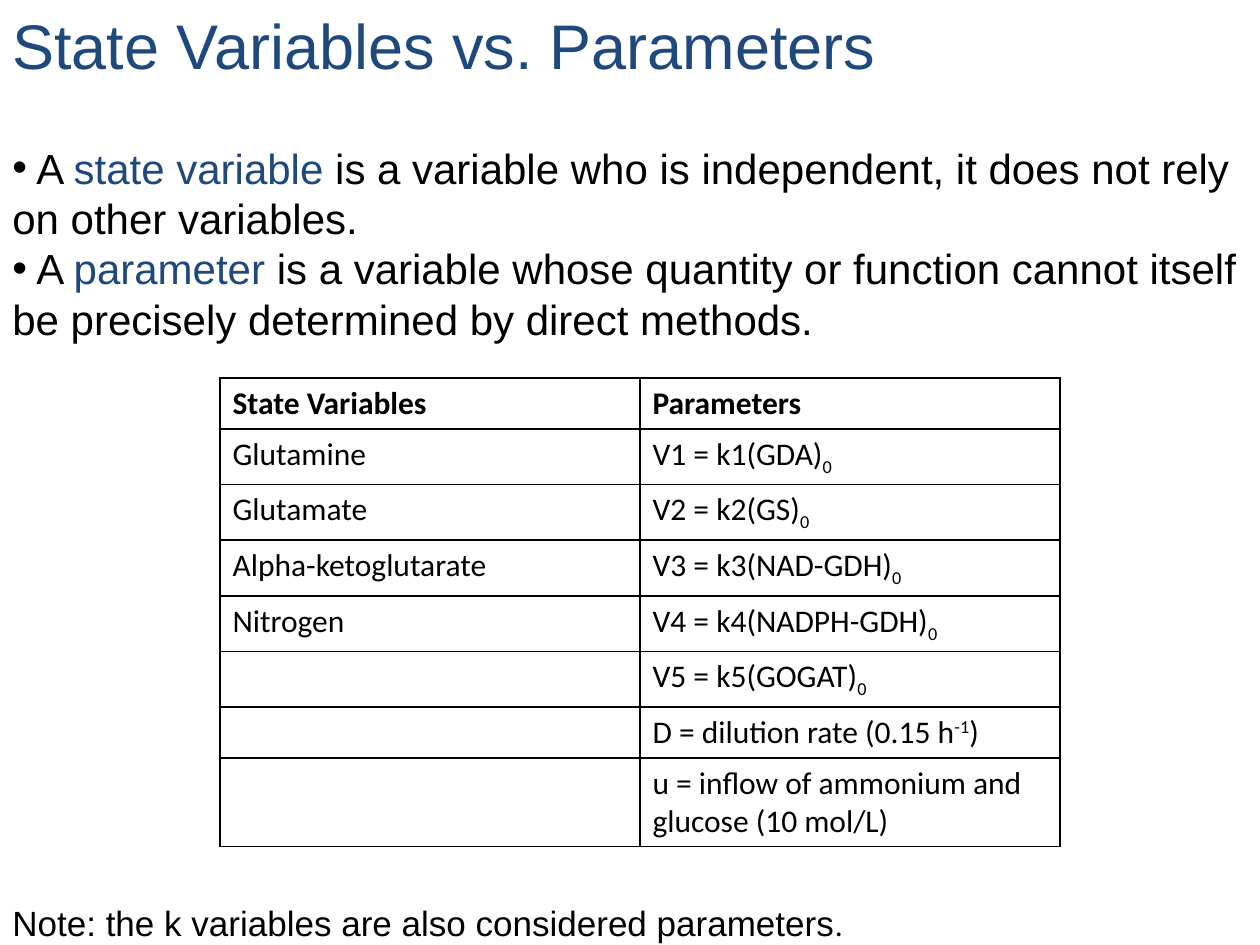
"""Build a slide that contrasts state variables with parameters."""
from dataclasses import dataclass

from lxml import etree
from pptx import Presentation
from pptx.dml.color import RGBColor
from pptx.enum.text import MSO_AUTO_SIZE
from pptx.oxml.ns import qn
from pptx.util import Emu, Pt

GROW = MSO_AUTO_SIZE.SHAPE_TO_FIT_TEXT
EMU_PER_PX = 914400 / 126
BORDER_SIDES = ("a:lnL", "a:lnR", "a:lnT", "a:lnB")
SUBSCRIPT, SUPERSCRIPT = -25000, 30000


@dataclass(frozen=True)
class Theme:
    """Colours, fonts and type sizes of the slide."""
    ink: str = "000000"
    accent: str = "1F497D"
    paper: str = "FFFFFF"
    heading_font: str = "Arial"
    table_font: str = "Calibri"
    title_size: int = 36
    body_size: int = 24
    note_size: int = 20
    table_size: int = 18


THEME = Theme()
TITLE = {"name": THEME.heading_font, "size": Pt(THEME.title_size), "color": THEME.accent}
BODY = {"name": THEME.heading_font, "size": Pt(THEME.body_size), "color": THEME.ink}
TERM = {**BODY, "color": THEME.accent}
NOTE = {**BODY, "size": Pt(THEME.note_size)}
CELL = {"name": THEME.table_font, "size": Pt(THEME.table_size), "color": THEME.ink}
HEADER = {**CELL, "bold": True}

DEFINITIONS = [
    ("state variable ", "is a variable who is independent, it does not rely on other variables."),
    ("parameter ", "is a variable whose quantity or function cannot itself be precisely "
                   "determined by direct methods."),
]
STATE_VARIABLES = ["Glutamine", "Glutamate", "Alpha-ketoglutarate", "Nitrogen"]
ENZYMES = ["GDA", "GS", "NAD-GDH", "NADPH-GDH", "GOGAT"]


def px(length):
    """Turn pixels into EMU."""
    return Emu(round(length * EMU_PER_PX))


def add_run(paragraph, text, style, baseline=None):
    """Append a formatted run, raised or lowered when a baseline is given."""
    run = paragraph.add_run()
    run.text = text
    for attribute, value in style.items():
        if attribute == "color":
            run.font.color.rgb = RGBColor.from_string(value)
        else:
            setattr(run.font, attribute, value)
    if baseline is not None:
        run._r.get_or_add_rPr().set("baseline", str(baseline))


def add_text(slide, box, paragraphs, bullet=None):
    """Add a wrapping text box with one list of runs per paragraph."""
    shape = slide.shapes.add_textbox(*map(px, box))
    frame = shape.text_frame
    frame.word_wrap = True
    frame.auto_size = GROW
    for index, runs in enumerate(paragraphs):
        paragraph = frame.add_paragraph() if index else frame.paragraphs[0]
        if bullet:
            properties = paragraph._p.get_or_add_pPr()
            etree.SubElement(properties, qn("a:buFont"), typeface=THEME.heading_font)
            etree.SubElement(properties, qn("a:buChar"), char=bullet)
        for run in runs:
            add_run(paragraph, *run)


def style_cell(cell):
    """Give a cell thin borders and a plain fill."""
    properties = cell._tc.get_or_add_tcPr()
    for side in BORDER_SIDES:
        line = etree.SubElement(properties, qn(side), w=str(Pt(1)))
        fill = etree.SubElement(line, qn("a:solidFill"))
        etree.SubElement(fill, qn("a:srgbClr"), val=THEME.ink)
    cell.fill.solid()
    cell.fill.fore_color.rgb = RGBColor.from_string(THEME.paper)


def add_table(slide, left, top, column_width, row_height, rows):
    """Add a bordered table whose cells are lists of runs."""
    columns = len(rows[0])
    table = slide.shapes.add_table(
        len(rows), columns, px(left), px(top),
        px(column_width * columns), px(row_height * len(rows))).table
    table.first_row = table.horz_banding = False
    for row_index, row in enumerate(rows):
        for column_index, runs in enumerate(row):
            cell = table.cell(row_index, column_index)
            style_cell(cell)
            for run in runs:
                add_run(cell.text_frame.paragraphs[0], *run)


def table_rows():
    """Pair each state variable with a parameter below the header."""
    parameters = [
        [(f"V{number} = k{number}({enzyme})", CELL), ("0", CELL, SUBSCRIPT)]
        for number, enzyme in enumerate(ENZYMES, 1)
    ]
    parameters += [
        [("D = dilution rate (0.15 h", CELL), ("-1", CELL, SUPERSCRIPT), (")", CELL)],
        [("u = inflow of ammonium and glucose (10 mol/L)", CELL)],
    ]
    variables = [[(name, CELL)] for name in STATE_VARIABLES]
    variables += [[]] * (len(parameters) - len(variables))
    header = ([("State Variables", HEADER)], [("Parameters", HEADER)])
    return [header, *zip(variables, parameters)]


def main():
    """Build and save the slide."""
    presentation = Presentation()
    presentation.slide_width, presentation.slide_height = px(1260), px(945)
    slide = presentation.slides.add_slide(presentation.slide_layouts[6])
    add_text(slide, (0, 0, 1260, 89), [[("State Variables vs. Parameters", TITLE)]])
    add_text(slide, (0, 136, 1260, 217),
             [[(" A ", BODY), (term, TERM), (meaning, BODY)] for term, meaning in DEFINITIONS],
             bullet="•")
    add_table(slide, 220, 378, 420, 51, table_rows())
    add_text(slide, (0, 895, 1260, 55),
             [[("Note: the k variables are also considered parameters", NOTE), (".", CELL)]])
    presentation.save("out.pptx")


if __name__ == "__main__":
    main()
